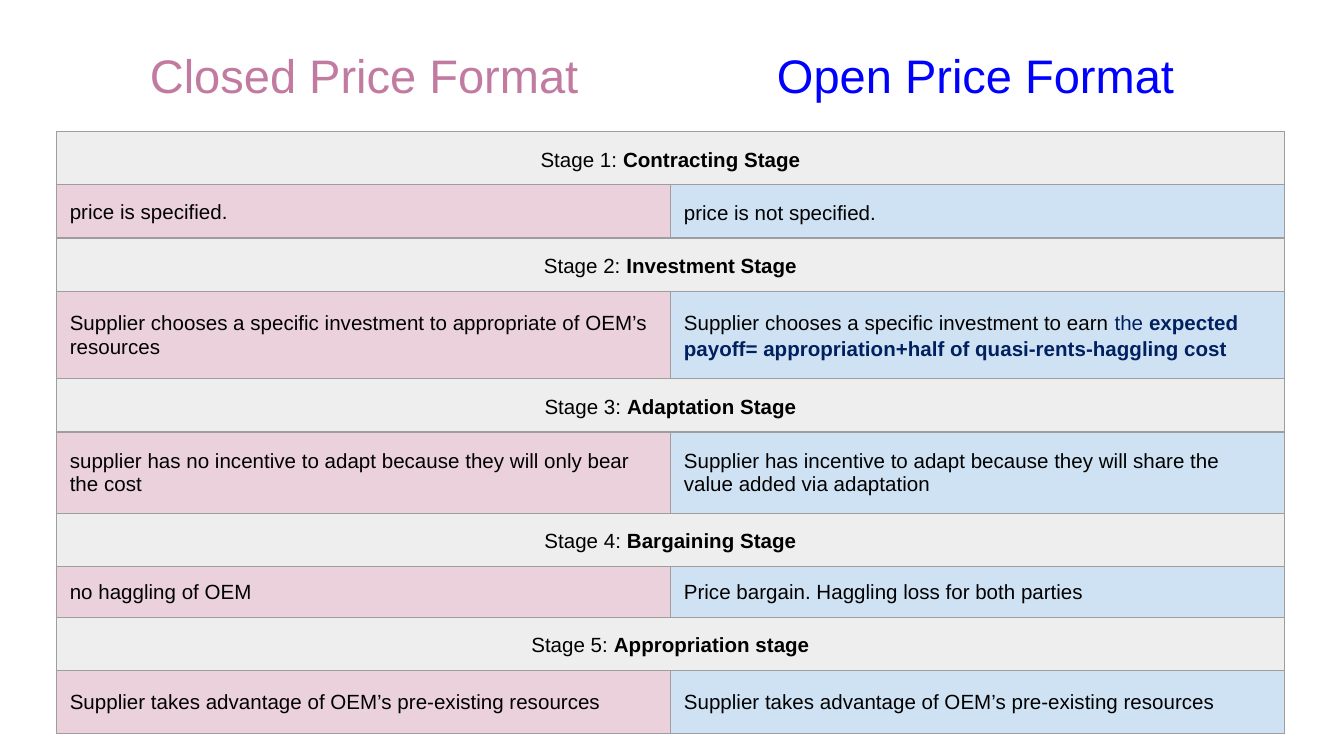
from dataclasses import dataclass

from lxml.etree import fromstring
from pptx import Presentation
from pptx.dml.color import RGBColor as Rgb
from pptx.enum.text import MSO_ANCHOR as Anchor, MSO_AUTO_SIZE as AutoSize, PP_ALIGN as Align
from pptx.util import Pt

DRAWING_NS = "http://schemas.openxmlformats.org/drawingml/2006/main"
COMPARISON_LAYOUT = 4


@dataclass(frozen=True)
class Theme:
    font: str = "Arial"
    title_size: float = 25.2
    cell_size: float = 11
    inset: float = 7.2
    paragraph_gap: float = 12
    border_width: float = 0.75
    border: str = "9E9E9E"
    text: str = "000000"
    emphasis: str = "002060"
    closed_title: str = "C27BA0"
    open_title: str = "0000FF"
    stage_fill: str = "EEEEEE"
    closed_fill: str = "EAD1DC"
    open_fill: str = "CFE2F3"


@dataclass(frozen=True)
class Entry:
    """Cell text as (text, bold, color) segments; spaced lines also get paragraph gaps."""
    segments: tuple
    line_spacing: float | None = None


@dataclass(frozen=True)
class Stage:
    name: str
    closed_entry: Entry
    open_entry: Entry
    height: float


class SlideBuilder:
    def __init__(self, slide, theme):
        self.slide = slide
        self.theme = theme

    def style_run(self, run, size, color, bold=False):
        run.font.name = self.theme.font
        run.font.size = Pt(size)
        run.font.bold = bold
        run.font.color.rgb = Rgb.from_string(color)

    def add_title(self, placeholder, text, left, color):
        placeholder.left, placeholder.top = Pt(left), Pt(17.3)
        placeholder.width, placeholder.height = Pt(329.8), Pt(45.4)
        frame = placeholder.text_frame
        frame.text = text
        frame.word_wrap = True
        frame.auto_size = AutoSize.NONE
        frame.vertical_anchor = Anchor.MIDDLE
        frame.margin_left = frame.margin_right = Pt(self.theme.inset)
        frame.margin_top = frame.margin_bottom = Pt(self.theme.inset)
        paragraph = frame.paragraphs[0]
        paragraph.alignment = Align.CENTER
        self.style_run(paragraph.runs[0], self.theme.title_size, color)

    def remove_empty_placeholders(self):
        for placeholder in list(self.slide.placeholders):
            if not placeholder.text_frame.text:
                placeholder.element.getparent().remove(placeholder.element)

    def format_cell(self, cell, fill):
        """Set fill, insets and a thin border on all four sides."""
        theme = self.theme
        cell.fill.solid()
        cell.fill.fore_color.rgb = Rgb.from_string(fill)
        cell.vertical_anchor = Anchor.MIDDLE
        cell.margin_left = cell.margin_right = Pt(theme.inset)
        cell.margin_top = cell.margin_bottom = Pt(theme.inset)
        properties = cell._tc.get_or_add_tcPr()
        for position, side in enumerate("LRTB"):
            properties.insert(position, fromstring(
                f'<a:ln{side} xmlns:a="{DRAWING_NS}" w="{Pt(theme.border_width)}">'
                f'<a:solidFill><a:srgbClr val="{theme.border}"/></a:solidFill></a:ln{side}>'))

    def write_cell(self, cell, entry, alignment=Align.LEFT):
        paragraph = cell.text_frame.paragraphs[0]
        paragraph.alignment = alignment
        if entry.line_spacing:
            paragraph.line_spacing = entry.line_spacing
            paragraph.space_before = paragraph.space_after = Pt(self.theme.paragraph_gap)
        for text, bold, color in entry.segments:
            run = paragraph.add_run()
            run.text = text
            self.style_run(run, self.theme.cell_size, color, bold)

    def add_stage_table(self, stages, left, top, width, stage_height):
        """Give each stage a merged heading row and a closed/open row."""
        theme = self.theme
        height = sum(stage_height + stage.height for stage in stages)
        table = self.slide.shapes.add_table(
            2 * len(stages), 2, Pt(left), Pt(top), Pt(width), Pt(height)).table
        for column in table.columns:
            column.width = Pt(width / 2)
        for index, stage in enumerate(stages):
            heading, detail = 2 * index, 2 * index + 1
            table.rows[heading].height = Pt(stage_height)
            table.rows[detail].height = Pt(stage.height)
            for column, fill in enumerate((theme.closed_fill, theme.open_fill)):
                self.format_cell(table.cell(heading, column), theme.stage_fill)
                self.format_cell(table.cell(detail, column), fill)
            table.cell(heading, 0).merge(table.cell(heading, 1))
            label = Entry(((f"Stage {index + 1}: ", False, theme.text),
                           (stage.name, True, theme.text)), 1.15)
            self.write_cell(table.cell(heading, 0), label, Align.CENTER)
            self.write_cell(table.cell(detail, 0), stage.closed_entry)
            self.write_cell(table.cell(detail, 1), stage.open_entry)


def plain(text, line_spacing=None):
    return Entry(((text, False, Theme.text),), line_spacing)


ADVANTAGE = "Supplier takes advantage of OEM’s pre-existing resources"
STAGES = [
    Stage("Contracting Stage", plain("price is specified.", 1.05),
          plain("price is not specified.", 1.15), 24),
    Stage("Investment Stage",
          plain("Supplier chooses a specific investment to appropriate of OEM’s resources", 1.05),
          Entry((("Supplier chooses a specific investment to earn ", False, Theme.text),
                 ("the ", False, Theme.emphasis),
                 ("expected payoff= appropriation+half of quasi-rents-haggling cost",
                  True, Theme.emphasis)), 1.15), 47),
    Stage("Adaptation Stage",
          plain("supplier has no incentive to adapt because they will only bear the cost"),
          plain("Supplier has incentive to adapt because they will share the "
                "value added via adaptation"), 43.6),
    Stage("Bargaining Stage", plain("no haggling of OEM", 1.05),
          plain("Price bargain. Haggling loss for both parties"), 24),
    Stage("Appropriation stage", plain(ADVANTAGE, 1.05), plain(ADVANTAGE), 33.8),
]


def main():
    presentation = Presentation()
    presentation.slide_width, presentation.slide_height = Pt(720), Pt(405)
    slide = presentation.slides.add_slide(presentation.slide_layouts[COMPARISON_LAYOUT])
    theme = Theme()
    builder = SlideBuilder(slide, theme)
    builder.add_title(slide.shapes.title, "Closed Price Format", 30.2, theme.closed_title)
    builder.add_title(slide.placeholders[1], "Open Price Format", 357.8, theme.open_title)
    builder.remove_empty_placeholders()
    builder.add_stage_table(STAGES, left=30.2, top=70.5, width=658, stage_height=24)
    presentation.save("out.pptx")


if __name__ == "__main__":
    main()
